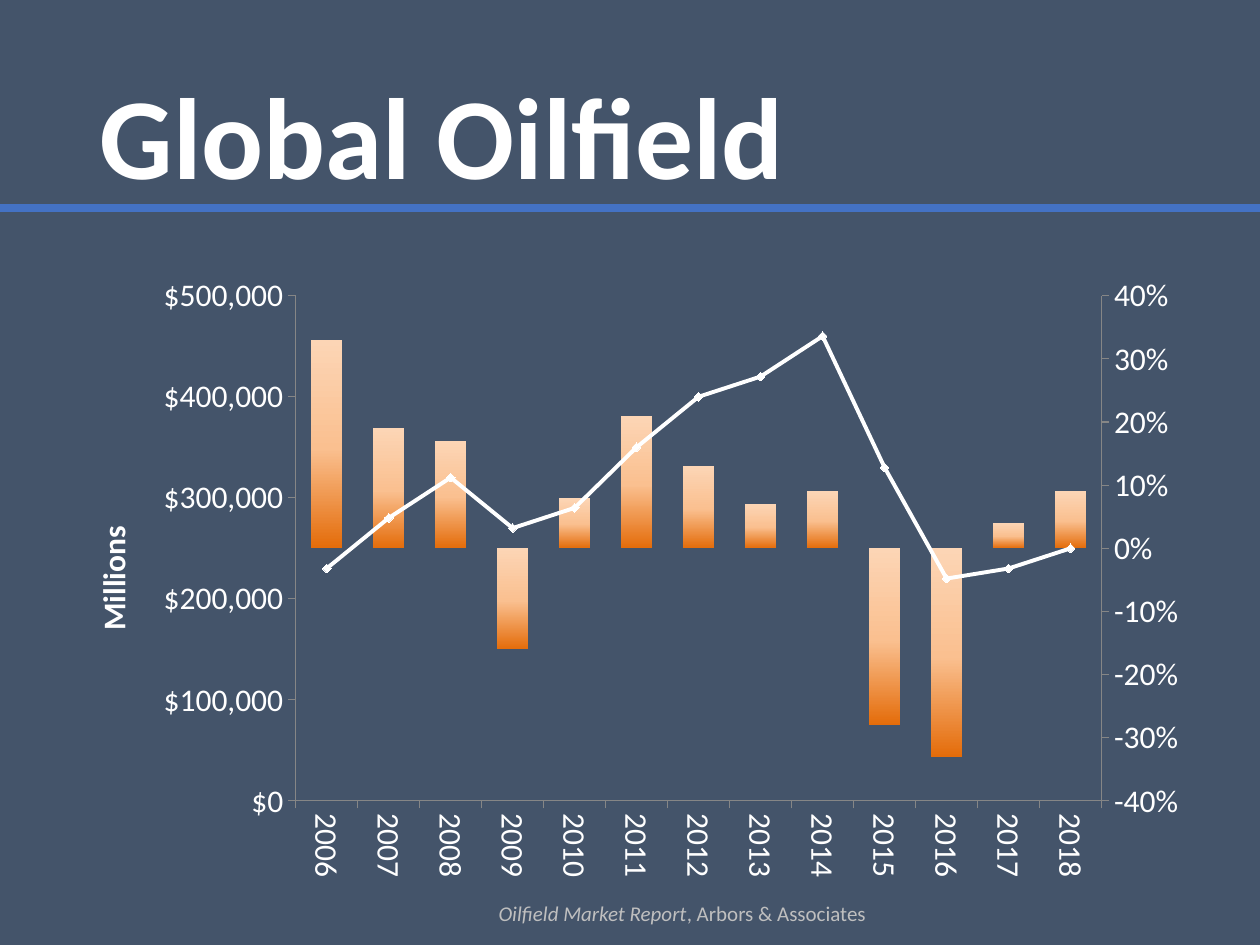
import copy

import pptx
import pptx.chart.axis
import pptx.chart.data
import pptx.dml.color
import pptx.enum.chart
import pptx.enum.shapes
import pptx.enum.text
import pptx.oxml
import pptx.oxml.ns
import pptx.util

Inches = pptx.util.Inches
Pt = pptx.util.Pt
RGBColor = pptx.dml.color.RGBColor
enums = pptx.enum.chart

SLATE = RGBColor(0x44, 0x54, 0x6A)
BLUE = RGBColor(0x44, 0x72, 0xC4)
WHITE = RGBColor(0xFF, 0xFF, 0xFF)
SILVER = RGBColor(0xBF, 0xBF, 0xBF)
GRAY = RGBColor(0x86, 0x86, 0x86)
FADE = [
    (0, RGBColor(0xE4, 0x6C, 0x0A)),
    (48, RGBColor(0xFA, 0xC0, 0x90)),
    (100, RGBColor(0xFC, 0xD5, 0xB5)),
]
FACE = "Calibri"

YEARS = [str(year) for year in range(2006, 2019)]
GROWTH = [0.33, 0.19, 0.17, -0.16, 0.08, 0.21, 0.13, 0.07, 0.09,
          -0.28, -0.33, 0.04, 0.09]
SALES = [230000, 280000, 320000, 270000, 290000, 350000, 400000, 420000,
         460000, 330000, 220000, 230000, 250000]


def style(font, size, color, bold=False):
    font.name = FACE
    font.size = Pt(size)
    font.bold = bold
    font.color.rgb = color


def parse(tag, inner=""):
    names = pptx.oxml.ns.nsdecls("a", "c")
    return pptx.oxml.parse_xml(f"<{tag} {names}>{inner}</{tag}>")


def place(x, y, w=None, h=None, inner=False):
    parts = '<c:layoutTarget val="inner"/>' if inner else ""
    parts += '<c:xMode val="edge"/><c:yMode val="edge"/>'
    for name, value in zip("xywh", (x, y, w, h)):
        if value is not None:
            parts += f'<c:{name} val="{value}"/>'
    return parse("c:layout", f"<c:manualLayout>{parts}</c:manualLayout>")


def add_head(slide, box):
    title = slide.shapes.title
    title.left, title.top, title.width, title.height = map(Inches, box)
    frame = title.text_frame
    frame.text = "Global Oilfield"
    frame.auto_size = pptx.enum.text.MSO_AUTO_SIZE.NONE
    frame.vertical_anchor = pptx.enum.text.MSO_ANCHOR.MIDDLE
    line = frame.paragraphs[0]
    line.alignment = pptx.enum.text.PP_ALIGN.LEFT
    line.line_spacing = 0.9
    style(line.font, 66, WHITE, True)


def add_rule(slide, left, top, width):
    rule = slide.shapes.add_connector(
        pptx.enum.shapes.MSO_CONNECTOR.STRAIGHT,
        Inches(left), Inches(top), Inches(left + width), Inches(top))
    rule.line.color.rgb = BLUE
    rule.line.width = Pt(4.25)
    rule.element.spPr.append(parse("a:effectLst"))


def split_plot(chart):
    area = chart.element.xpath(".//c:plotArea")[0]
    bar = area.xpath("c:barChart")[0]
    sales = bar.xpath("c:ser")[1]
    for flag in sales.xpath("c:invertIfNegative"):
        sales.remove(flag)
    line = parse("c:lineChart",
                 '<c:grouping val="standard"/><c:varyColors val="0"/>'
                 '<c:marker val="1"/><c:axId val="501"/><c:axId val="502"/>')
    line.insert(2, sales)
    bar.addnext(line)
    last = area.xpath("c:valAx")[0]
    for kind, own, other in (("catAx", "501", "502"), ("valAx", "502", "501")):
        axis = copy.deepcopy(area.xpath(f"c:{kind}")[0])
        axis.xpath("c:axId")[0].set("val", own)
        axis.xpath("c:crossAx")[0].set("val", other)
        last.addnext(axis)
        last = axis
    for old in area.xpath("c:layout"):
        area.remove(old)
    area.insert(0, place(0.205, 0.05, 0.71, 0.81, inner=True))
    return area


def set_axis(axis, low=None, high=None, step=None, code=None):
    axis.has_major_gridlines = False
    axis.major_tick_mark = enums.XL_TICK_MARK.OUTSIDE
    axis.minor_tick_mark = enums.XL_TICK_MARK.NONE
    axis.format.line.color.rgb = GRAY
    axis.format.line.width = Pt(0.75)
    style(axis.tick_labels.font, 18, WHITE)
    if code:
        axis.minimum_scale, axis.maximum_scale = low, high
        axis.major_unit = step
        axis.tick_labels.number_format = code
        axis.tick_labels.number_format_is_linked = False


def set_axes(area):
    base, foot = area.xpath("c:catAx")
    right, left = area.xpath("c:valAx")
    pptx.chart.axis.CategoryAxis(base).visible = False
    set_axis(pptx.chart.axis.CategoryAxis(foot))
    set_axis(pptx.chart.axis.ValueAxis(right), -0.4, 0.4, 0.1, "0%")
    sales = pptx.chart.axis.ValueAxis(left)
    set_axis(sales, 0, 500000, 100000, '"$"#,##0')
    right.xpath("c:axPos")[0].set("val", "r")
    right.xpath("c:crosses")[0].set("val", "max")
    foot.xpath("c:crosses")[0].set("val", "min")
    foot.xpath("c:txPr/a:bodyPr")[0].set("rot", "5400000")

    frame = sales.axis_title.text_frame
    frame.text = "Millions"
    style(frame.paragraphs[0].font, 18, WHITE, True)
    title = left.xpath("c:title")[0]
    title.xpath(".//a:bodyPr")[0].set("rot", "-5400000")
    for old in title.xpath("c:layout"):
        title.remove(old)
    title.xpath("c:tx")[0].addnext(place(0.02, 0.41))


def set_bars(chart):
    plot = chart.plots[0]
    plot.gap_width = 100
    plot.vary_by_categories = False
    bars = plot.series[0]
    bars.invert_if_negative = False
    bars.format.fill.background()
    stops = "".join(
        f'<a:gs pos="{spot * 1000}"><a:srgbClr val="{color}"/></a:gs>'
        for spot, color in FADE)
    fade = parse("a:gradFill", f"<a:gsLst>{stops}</a:gsLst>"
                 '<a:lin ang="16200000" scaled="0"/>')
    blank = chart.element.xpath(".//c:barChart/c:ser/c:spPr/a:noFill")[0]
    blank.getparent().replace(blank, fade)


def set_line(chart):
    line = chart.plots[1].series[0]
    line.smooth = False
    line.format.line.color.rgb = WHITE
    line.format.line.width = Pt(2.25)
    mark = line.marker
    mark.style = enums.XL_MARKER_STYLE.DIAMOND
    mark.size = 5
    mark.format.fill.solid()
    mark.format.fill.fore_color.rgb = WHITE
    mark.format.line.color.rgb = WHITE


def add_graph(slide, box):
    data = pptx.chart.data.CategoryChartData()
    data.categories = YEARS
    data.add_series("Series 1", GROWTH, "0%")
    data.add_series("Series 2", SALES, '"$"#,##0')
    chart = slide.shapes.add_chart(
        enums.XL_CHART_TYPE.COLUMN_CLUSTERED, *map(Inches, box), data).chart
    chart.has_legend = False
    chart.has_title = False
    style(chart.font, 18, WHITE)
    set_axes(split_plot(chart))
    set_bars(chart)
    set_line(chart)


def add_credit(slide, box):
    frame = slide.shapes.add_textbox(*map(Inches, box)).text_frame
    frame.word_wrap = True
    frame.auto_size = pptx.enum.text.MSO_AUTO_SIZE.SHAPE_TO_FIT_TEXT
    line = frame.paragraphs[0]
    line.alignment = pptx.enum.text.PP_ALIGN.CENTER
    style(line.font, 12, SILVER)
    name = line.add_run()
    name.text = "Oilfield Market Report"
    name.font.italic = True
    line.add_run().text = ", Arbors & Associates"


def main():
    deck = pptx.Presentation()
    deck.slide_width, deck.slide_height = Inches(10), Inches(7.5)
    slide = deck.slides.add_slide(deck.slide_layouts[5])
    slide.background.fill.solid()
    slide.background.fill.fore_color.rgb = SLATE
    add_head(slide, (0.69, 0.4, 8.62, 1.45))
    add_rule(slide, 0, 1.65, 10)
    add_graph(slide, (0.5, 2.1, 9.01, 4.95))
    add_credit(slide, (2.76, 7.1, 5.31, 0.3))
    deck.save("out.pptx")


if __name__ == "__main__":
    main()
